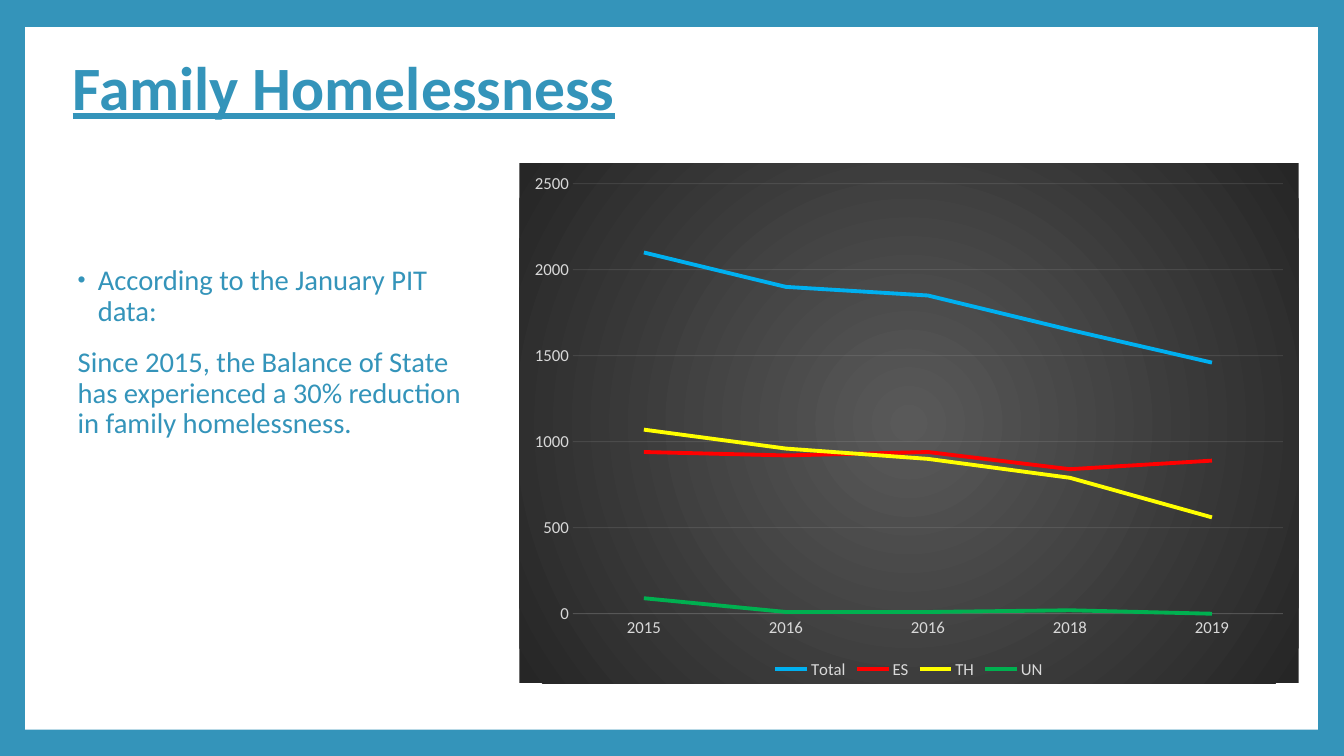
from lxml import etree
from pptx import Presentation
from pptx import util as u
from pptx.chart.data import CategoryChartData
from pptx.dml.color import RGBColor
from pptx.enum import chart as ch, shapes, text
from pptx.oxml import parse_xml
from pptx.oxml.ns import qn

BLUE, WHITE, PALE, GRID = "3494BA", "FFFFFF", "D9D9D9", "F2F2F2"
FONT = "Calibri"
TITLE = "Family Homelessness"
BODY = [
    "According to the January PIT data:",
    "Since 2015, the Balance of State has experienced a 30% reduction "
    "in family homelessness.",
]
YEARS = ["2015", "2016", "2016", "2018", "2019"]
SERIES = [
    ("Total", "00B0F0", (2100, 1900, 1850, 1650, 1460)),
    ("ES", "FF0000", (940, 920, 940, 840, 890)),
    ("TH", "FFFF00", (1070, 960, 900, 790, 560)),
    ("UN", "00B050", (90, 10, 10, 20, 0)),
]
PANEL = (0.25, 0.27, 12.82, 6.97)
HEAD = (0.62, 0.62, 9.58, 0.55)
NOTE = (0.62, 2.59, 4.11, 2.02)
PLOT = (5.15, 1.62, 7.73, 5.16)
NS = ('xmlns:a="http://schemas.openxmlformats.org/drawingml/2006/main" '
      'xmlns:c="http://schemas.openxmlformats.org/drawingml/2006/chart"')
BACK = f"""<c:spPr {NS}><a:gradFill><a:gsLst>
<a:gs pos="0"><a:srgbClr val="595959"/></a:gs>
<a:gs pos="100000"><a:srgbClr val="262626"/></a:gs></a:gsLst>
<a:path path="circle"><a:fillToRect l="50000" t="50000" r="50000" b="50000"/></a:path>
</a:gradFill><a:ln><a:noFill/></a:ln></c:spPr>"""


def rgb(code):
    return RGBColor.from_string(code)


def box(at):
    return [u.Inches(n) for n in at]


def place(holder, at, anchor):
    holder.left, holder.top, holder.width, holder.height = box(at)
    frame = holder.text_frame
    frame.word_wrap = True
    frame.auto_size = text.MSO_AUTO_SIZE.NONE
    frame.vertical_anchor = anchor
    return frame


def style(font, size, color):
    font.name, font.size = FONT, u.Pt(size)
    font.color.rgb = rgb(color)


def faint(line):
    """Make a thin pale line at 10% opacity."""
    line.width = u.Pt(0.75)
    line.color.rgb = rgb(GRID)
    tint = line.fill._xPr.find(".//" + qn("a:srgbClr"))
    etree.SubElement(tint, qn("a:alpha")).set("val", "10000")


def bullet(para):
    props = para._p.get_or_add_pPr()
    for tag, key, val in (("buSzPct", "val", "80000"),
                          ("buFont", "typeface", "Arial"),
                          ("buChar", "char", "•")):
        etree.SubElement(props, qn("a:" + tag)).set(key, val)


def indent(para, left, first):
    props = para._p.get_or_add_pPr()
    props.set("marL", str(u.Inches(left)))
    props.set("indent", str(u.Inches(first)))


def add_panel(slide):
    panel = slide.shapes.add_shape(shapes.MSO_SHAPE.RECTANGLE, *box(PANEL))
    panel.shadow.inherit = False
    panel.fill.solid()
    panel.fill.fore_color.rgb = rgb(WHITE)
    panel.line.fill.background()
    slide.shapes._spTree.insert(2, panel._element)


def add_text(slide):
    frame = place(slide.shapes.title, HEAD, text.MSO_ANCHOR.MIDDLE)
    frame.text = TITLE
    para = frame.paragraphs[0]
    para.alignment, para.line_spacing = text.PP_ALIGN.LEFT, 0.9
    font = para.runs[0].font
    style(font, 44, BLUE)
    font.bold = font.underline = True

    frame = place(slide.placeholders[1], NOTE, text.MSO_ANCHOR.TOP)
    frame.text = "\n".join(BODY)
    lead, rest = frame.paragraphs
    for para in (lead, rest):
        para.line_spacing = 0.9
        para.space_before = u.Pt(0 if para is lead else 14)
        style(para.runs[0].font, 20.4, BLUE)
    indent(lead, 0.25, -0.2)
    bullet(lead)
    indent(rest, 0.05, 0)
    etree.SubElement(rest._p.get_or_add_pPr(), qn("a:buNone"))


def add_lines(slide):
    data = CategoryChartData()
    data.categories = YEARS
    for name, _, vals in SERIES:
        data.add_series(name, vals)
    chart = slide.shapes.add_chart(
        ch.XL_CHART_TYPE.LINE, *box(PLOT), data).chart
    style(chart.font, 12, PALE)
    chart.has_title = False
    chart.has_legend = True
    chart.legend.position = ch.XL_LEGEND_POSITION.BOTTOM
    chart.legend.include_in_layout = False
    style(chart.legend.font, 12, PALE)
    chart.plots[0].vary_by_categories = False
    for line, (_, color, _) in zip(chart.plots[0].series, SERIES):
        line.smooth = False
        line.marker.style = ch.XL_MARKER_STYLE.NONE
        line.format.line.width = u.Pt(2.75)
        line.format.line.color.rgb = rgb(color)
    years, count = chart.category_axis, chart.value_axis
    for axis in (years, count):
        axis.major_tick_mark = axis.minor_tick_mark = ch.XL_TICK_MARK.NONE
        style(axis.tick_labels.font, 12, PALE)
    faint(years.format.line)
    count.minimum_scale, count.maximum_scale, count.major_unit = 0, 2500, 500
    count.format.line.fill.background()
    count.has_major_gridlines = True
    faint(count.major_gridlines.format.line)
    root = chart._chartSpace
    root.find(qn("c:chart")).addnext(parse_xml(BACK))


def main():
    deck = Presentation()
    deck.slide_width, deck.slide_height = u.Inches(13.33), u.Inches(7.5)
    slide = deck.slides.add_slide(deck.slide_layouts[1])
    slide.background.fill.solid()
    slide.background.fill.fore_color.rgb = rgb(BLUE)
    add_panel(slide)
    add_text(slide)
    add_lines(slide)
    deck.save("out.pptx")


if __name__ == "__main__":
    main()
